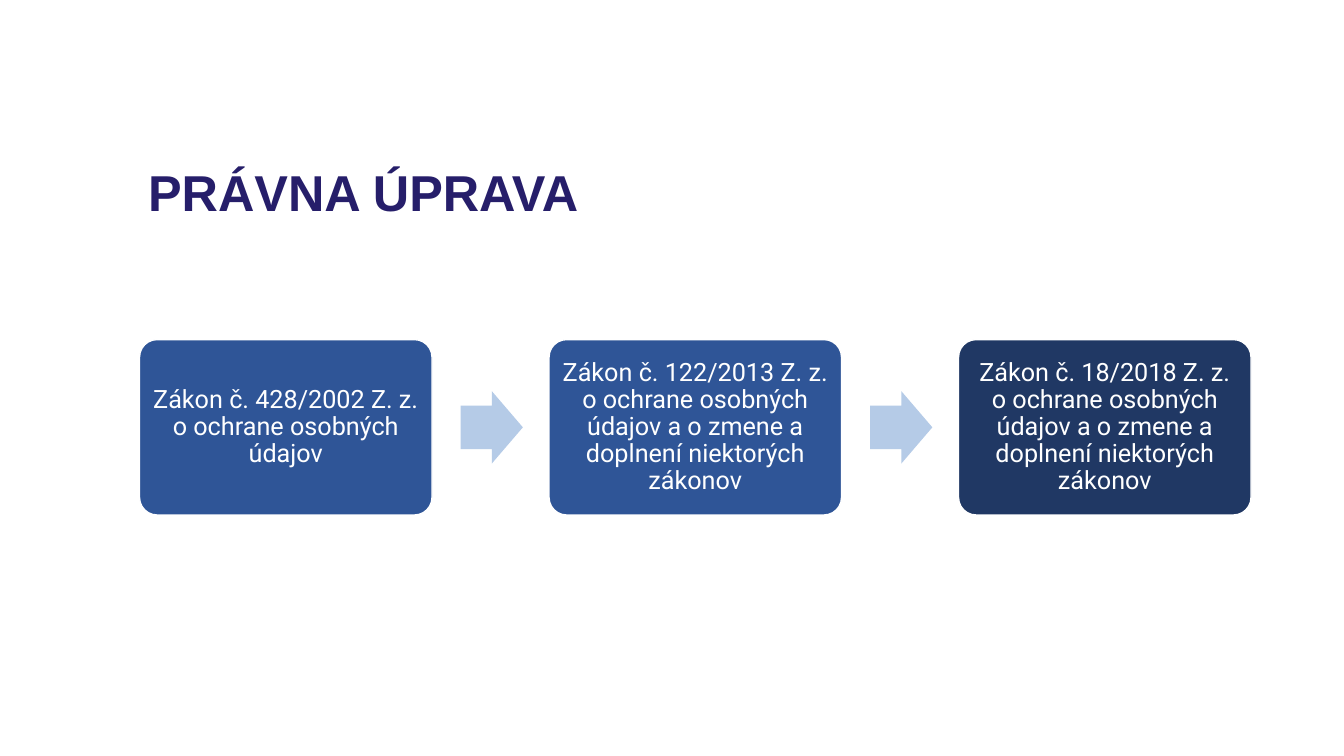
from pptx import Presentation
from pptx import util as u
from pptx.dml.color import RGBColor
from pptx.enum import shapes, text

# Content
TITLE = "PRÁVNA ÚPRAVA"
LAWS = [
    ("Zákon č. 428/2002 Z. z. o ochrane osobných údajov", "2F5597"),
    ("Zákon č. 122/2013 Z. z. o ochrane osobných údajov a o zmene a "
     "doplnení niektorých zákonov", "2F5597"),
    ("Zákon č. 18/2018 Z. z. o ochrane osobných údajov a o zmene a "
     "doplnení niektorých zákonov", "203864"),
]
WHITE, NAVY, PALE_BLUE = "FFFFFF", "261E6A", "B5CBE7"

# Layout in points
BOX_LEFT, BOX_TOP, BOX_WIDTH, BOX_HEIGHT = 99.7, 242.6, 208.9, 125.3
PITCH = 292.5
ARROW_OFFSET, ARROW_WIDTH, ARROW_HEIGHT = 229.4, 44.4, 51.8
INSET = 5


def color(value):
    return RGBColor.from_string(value)


def add_shape(slide, kind, box, fill, adjustments):
    shape = slide.shapes.add_shape(kind, *map(u.Pt, box))
    shape.shadow.inherit = False
    shape.fill.solid()
    shape.fill.fore_color.rgb = color(fill)
    shape.line.fill.background()
    for index, value in enumerate(adjustments):
        shape.adjustments[index] = value
    return shape


def write(frame, words, font_name, size, font_color, alignment, bold=False):
    frame.word_wrap = True
    frame.auto_size = text.MSO_AUTO_SIZE.NONE
    frame.vertical_anchor = text.MSO_ANCHOR.MIDDLE
    paragraph = frame.paragraphs[0]
    paragraph.alignment = alignment
    paragraph.line_spacing = 0.9
    paragraph.space_before = u.Pt(0)
    run = paragraph.add_run()
    run.text = words
    run.font.name = font_name
    run.font.size = u.Pt(size)
    run.font.bold = bold
    run.font.color.rgb = color(font_color)


def main():
    presentation = Presentation()
    presentation.slide_width, presentation.slide_height = u.Pt(960), u.Pt(540)
    slide = presentation.slides.add_slide(presentation.slide_layouts[5])

    # Title
    title = slide.shapes.title
    title.left, title.top = u.Pt(98.6), u.Pt(118)
    title.width, title.height = u.Pt(795.6), u.Pt(43.2)
    write(title.text_frame, TITLE, "Arial", 36, NAVY, text.PP_ALIGN.LEFT, True)

    # Chain of laws with an arrow between neighbours
    for index, (law, fill) in enumerate(LAWS):
        left = BOX_LEFT + index * PITCH
        box = add_shape(slide, shapes.MSO_SHAPE.ROUNDED_RECTANGLE,
                        (left, BOX_TOP, BOX_WIDTH, BOX_HEIGHT), fill, [0.1])
        box.line.color.rgb = color(WHITE)
        box.line.width = u.Pt(1)
        frame = box.text_frame
        frame.margin_left = frame.margin_right = u.Pt(INSET)
        frame.margin_top = frame.margin_bottom = u.Pt(INSET)
        write(frame, law, "Roboto", 18, WHITE, text.PP_ALIGN.CENTER)

        if index < len(LAWS) - 1:
            arrow_top = BOX_TOP + (BOX_HEIGHT - ARROW_HEIGHT) / 2
            add_shape(slide, shapes.MSO_SHAPE.RIGHT_ARROW,
                      (left + ARROW_OFFSET, arrow_top, ARROW_WIDTH, ARROW_HEIGHT),
                      PALE_BLUE, [0.6, 0.5])

    presentation.save("out.pptx")


if __name__ == "__main__":
    main()
